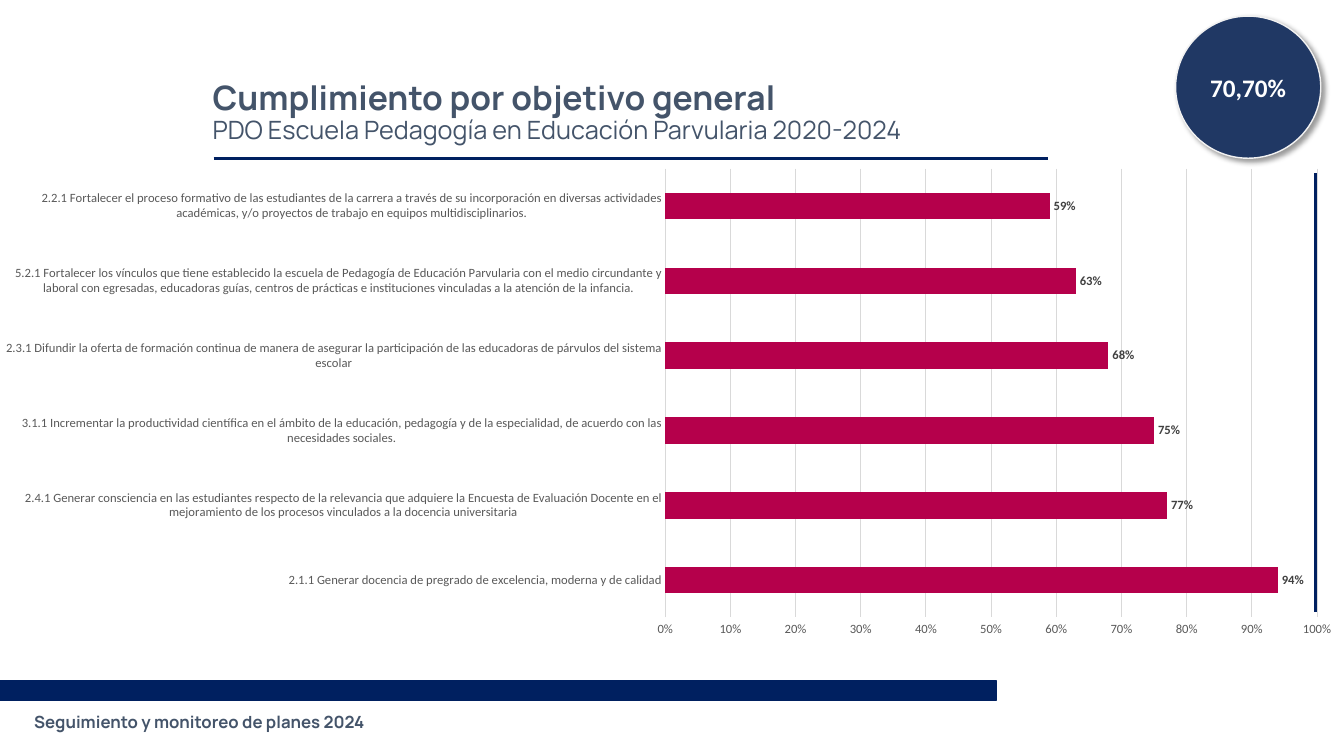
from lxml import etree
from pptx import Presentation
from pptx.chart.data import CategoryChartData
from pptx.dml.color import RGBColor
from pptx.enum.chart import XL_CHART_TYPE, XL_LABEL_POSITION, XL_TICK_MARK
from pptx.enum.shapes import MSO_CONNECTOR, MSO_SHAPE
from pptx.enum.text import MSO_ANCHOR, PP_ALIGN
from pptx.oxml import parse_xml
from pptx.oxml.ns import nsdecls, qn
from pptx.util import Inches, Pt

NAVY, SLATE, CRIMSON, WHITE = "002060", "44546A", "B5004B", "FFFFFF"
GRID, AXIS_TEXT = "D9D9D9", "595959"

OBJECTIVES = [
    ("2.1.1 Generar docencia de pregrado de excelencia, moderna y de calidad", 0.94),
    ("2.4.1 Generar consciencia en las estudiantes respecto de la relevancia que adquiere la "
     "Encuesta de Evaluación Docente en el mejoramiento de los procesos vinculados a la "
     "docencia universitaria", 0.77),
    ("3.1.1 Incrementar la productividad científica en el ámbito de la educación, pedagogía y "
     "de la especialidad, de acuerdo con las necesidades sociales.", 0.75),
    ("2.3.1 Difundir la oferta de formación continua de manera de asegurar la participación de "
     "las educadoras de párvulos del sistema escolar", 0.68),
    ("5.2.1 Fortalecer los vínculos que tiene establecido la escuela de Pedagogía de Educación "
     "Parvularia con el medio circundante y laboral con egresadas, educadoras guías, centros de "
     "prácticas e instituciones vinculadas a la atención de la infancia.", 0.63),
    ("2.2.1 Fortalecer el proceso formativo de las estudiantes de la carrera a través de su "
     "incorporación en diversas actividades académicas, y/o proyectos de trabajo en equipos "
     "multidisciplinarios.", 0.59),
]


def rgb(color):
    return RGBColor.from_string(color)


def set_font(font, name, size, color, bold=False):
    font.name, font.size, font.bold = name, Pt(size), bold
    font.color.rgb = rgb(color)


def set_line(line, color, width):
    line.color.rgb = rgb(color)
    line.width = Pt(width)


class Deck:
    def __init__(self, prs, heading="Manrope", body="Calibri"):
        self.heading, self.body = heading, body
        self.s = prs.slides.add_slide(prs.slide_layouts[6])

    def fill_text(self, sp, lines, align=PP_ALIGN.LEFT, spacing=None):
        """Each line is (text, font name, size, color, bold)."""
        tf = sp.text_frame
        tf.word_wrap = True
        tf.vertical_anchor = MSO_ANCHOR.MIDDLE
        for i, (text, *style) in enumerate(lines):
            p = tf.add_paragraph() if i else tf.paragraphs[0]
            p.alignment = align
            p.line_spacing = spacing
            r = p.add_run()
            r.text = text
            set_font(r.font, *style)

    def shape(self, kind, box, fill, outline=None):
        sp = self.s.shapes.add_shape(kind, *map(Inches, box))
        sp.shadow.inherit = False
        sp.fill.solid()
        sp.fill.fore_color.rgb = rgb(fill)
        if outline:
            set_line(sp.line, outline, 1)
        else:
            sp.line.fill.background()
        return sp

    def text(self, box, lines, spacing):
        self.fill_text(self.s.shapes.add_textbox(*map(Inches, box)), lines, spacing=spacing)

    def rule(self, x1, y1, x2, y2):
        ends = map(Inches, (x1, y1, x2, y2))
        line = self.s.shapes.add_connector(MSO_CONNECTOR.STRAIGHT, *ends)
        set_line(line.line, NAVY, 2.25)
        etree.SubElement(line._element.spPr, qn("a:effectLst"))

    def drop_shadow(self, sp):
        effects = sp._element.spPr.find(qn("a:effectLst"))
        effects.append(parse_xml(
            f'<a:outerShdw {nsdecls("a")} blurRad="{Pt(4)}" dist="{Pt(3)}" dir="2700000" '
            'algn="tl" rotWithShape="0"><a:srgbClr val="000000"><a:alpha val="40000"/>'
            '</a:srgbClr></a:outerShdw>'))

    def bar_chart(self, box, rows, plot_box):
        data = CategoryChartData(number_format="0%")
        data.categories = [name for name, _ in rows]
        data.add_series("Cumplimiento", [value for _, value in rows])
        chart = self.s.shapes.add_chart(
            XL_CHART_TYPE.BAR_CLUSTERED, *map(Inches, box), data).chart
        chart.has_legend = chart.has_title = False
        set_font(chart.font, self.body, 10, "000000")

        # Bars and their labels
        plot = chart.plots[0]
        plot.gap_width, plot.vary_by_categories = 182, False
        fill = plot.series[0].format.fill
        fill.solid()
        fill.fore_color.rgb = rgb(CRIMSON)
        plot.has_data_labels = True
        labels = plot.data_labels
        labels.show_value = True
        labels.position = XL_LABEL_POSITION.OUTSIDE_END
        labels.number_format, labels.number_format_is_linked = "0%", False
        set_font(labels.font, self.body, 9, "404040", True)

        # Axes
        for axis in (chart.category_axis, chart.value_axis):
            axis.major_tick_mark = axis.minor_tick_mark = XL_TICK_MARK.NONE
            set_font(axis.tick_labels.font, self.body, 9, AXIS_TEXT)
        set_line(chart.category_axis.format.line, GRID, 0.75)
        axis = chart.value_axis
        axis.minimum_scale, axis.maximum_scale, axis.major_unit = 0, 1, 0.1
        axis.tick_labels.number_format = "0%"
        axis.tick_labels.number_format_is_linked = False
        axis.format.line.fill.background()
        set_line(axis.major_gridlines.format.line, GRID, 0.75)

        # Fixed plot area, as fractions of the chart
        area = chart._chartSpace.chart.plotArea
        for old in area.findall(qn("c:layout")):
            area.remove(old)
        sizes = "".join(f'<c:{k} val="{v}"/>' for k, v in zip("xywh", plot_box))
        area.insert(0, parse_xml(
            f'<c:layout {nsdecls("c")}><c:manualLayout><c:layoutTarget val="inner"/>'
            f'<c:xMode val="edge"/><c:yMode val="edge"/>{sizes}'
            '</c:manualLayout></c:layout>'))


def main():
    prs = Presentation()
    prs.slide_width, prs.slide_height = Inches(13.33), Inches(7.5)
    deck = Deck(prs)

    # Footer
    deck.shape(MSO_SHAPE.RECTANGLE, (0, 6.75, 9.88, 0.2), NAVY, NAVY)
    footer = deck.shape(MSO_SHAPE.RECTANGLE, (0.24, 6.97, 4.07, 0.38), WHITE)
    deck.fill_text(footer, [
        ("Seguimiento y monitoreo de planes 2024", deck.heading, 12, SLATE, True)])

    # Title
    deck.rule(2.12, 1.57, 10.39, 1.57)
    deck.text((2.01, 0.4, 10.41, 1.45), [
        ("Cumplimiento por objetivo general", deck.heading, 24, SLATE, True),
        ("PDO Escuela Pedagogía en Educación Parvularia 2020-2024",
         deck.heading, 18, SLATE, False),
    ], spacing=0.9)

    # Progress per objective, with the target line
    deck.bar_chart((0, 1.57, 13.33, 4.9), OBJECTIVES, (0.495, 0.021, 0.485, 0.909))
    deck.rule(13.05, 1.72, 13.05, 6.07)

    # Overall result
    badge = deck.shape(MSO_SHAPE.OVAL, (11.66, 0.16, 1.44, 1.41), "203864", "F2F2F2")
    deck.drop_shadow(badge)
    deck.fill_text(badge, [("70,70%", deck.body, 18, WHITE, True)], PP_ALIGN.CENTER)

    prs.save("out.pptx")


if __name__ == "__main__":
    main()
